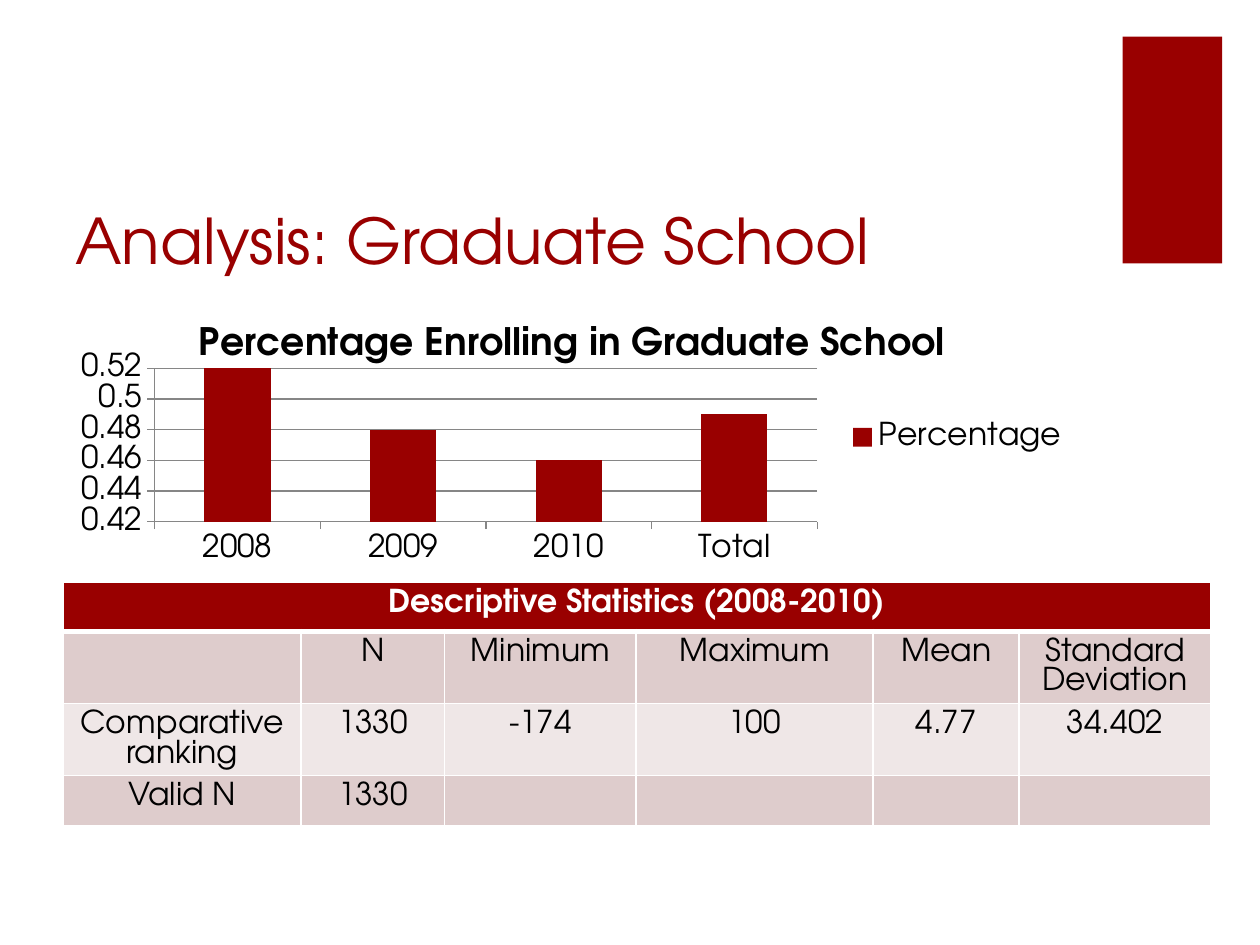
"""Build the graduate school analysis slide with a chart and a statistics table."""
from dataclasses import dataclass

from lxml import etree
from pptx import Presentation
from pptx.chart.data import CategoryChartData
from pptx.dml.color import RGBColor
from pptx.enum.chart import XL_CHART_TYPE, XL_LEGEND_POSITION, XL_TICK_MARK
from pptx.enum.shapes import MSO_SHAPE
from pptx.enum.text import MSO_ANCHOR, PP_ALIGN
from pptx.oxml import parse_xml
from pptx.oxml.ns import nsdecls, qn
from pptx.util import Inches, Pt

COLUMN = XL_CHART_TYPE.COLUMN_CLUSTERED
LEGEND_RIGHT = XL_LEGEND_POSITION.RIGHT
TICK_OUT = XL_TICK_MARK.OUTSIDE
RECTANGLE = MSO_SHAPE.RECTANGLE
BOTTOM = MSO_ANCHOR.BOTTOM
CENTER = PP_ALIGN.CENTER

HEADING = "Analysis: Graduate School"
CHART_TITLE = "Percentage Enrolling in Graduate School"
SERIES_NAME = "Percentage"
ENROLLMENT = {"2008": 0.52, "2009": 0.48, "2010": 0.46, "Total": 0.49}
STATISTICS = [
    ["Descriptive Statistics (2008-2010)", "", "", "", "", ""],
    ["", "N", "Minimum", "Maximum", "Mean", "Standard Deviation"],
    ["Comparative ranking", "1330", "-174", "100", "4.77", "34.402"],
    ["Valid N", "1330", "", "", "", ""],
]
COLUMN_WIDTHS = [1.89, 1.14, 1.52, 1.88, 1.16, 1.52]
ROW_HEIGHTS = [0.39, 0.57, 0.57, 0.4]
PLOT_AREA = {"x": 0.09, "y": 0.24, "w": 0.65, "h": 0.58}


@dataclass(frozen=True)
class Theme:
    """Colours, font and type sizes of the slide."""
    accent: str = "990000"
    ink: str = "000000"
    paper: str = "FFFFFF"
    grid: str = "868686"
    bands: tuple = ("EFE7E7", "DECCCC")
    font: str = "TeX Gyre Adventor"
    heading: float = 36
    chart_title: float = 21.6
    body: float = 18
    line_height: float = 17


THEME = Theme()


def style(font, size, color, bold=False):
    """Apply the theme font with a size, colour and weight."""
    font.name = THEME.font
    font.size = Pt(size)
    font.bold = bold
    font.color.rgb = RGBColor.from_string(color)


def paint(fill, color):
    """Fill with one solid colour."""
    fill.solid()
    fill.fore_color.rgb = RGBColor.from_string(color)


def add_heading(slide):
    """Add the corner block and the slide heading."""
    block = slide.shapes.add_shape(
        RECTANGLE, Inches(8.91), Inches(0.29), Inches(0.79), Inches(1.8))
    block.shadow.inherit = False
    paint(block.fill, THEME.accent)
    block.line.fill.background()

    heading = slide.shapes.add_textbox(
        Inches(0.5), Inches(1), Inches(8.08), Inches(1.25)).text_frame
    heading.word_wrap = True
    heading.vertical_anchor = BOTTOM
    heading.text = HEADING
    style(heading.paragraphs[0].runs[0].font, THEME.heading, THEME.accent)


def place_plot(chart):
    """Fix the inner plot area as fractions of the chart."""
    plot_area = chart.plots[0]._element.getparent()
    for old in plot_area.findall(qn("c:layout")):
        plot_area.remove(old)
    layout = parse_xml(f"<c:layout {nsdecls('c')}><c:manualLayout/></c:layout>")
    settings = {"layoutTarget": "inner", "xMode": "edge", "yMode": "edge", **PLOT_AREA}
    for tag, value in settings.items():
        etree.SubElement(layout[0], qn(f"c:{tag}")).set("val", str(value))
    plot_area.insert(0, layout)


def add_enrollment_chart(slide):
    """Add the enrollment column chart."""
    enrollment = CategoryChartData()
    enrollment.categories = list(ENROLLMENT)
    enrollment.add_series(SERIES_NAME, list(ENROLLMENT.values()))
    chart = slide.shapes.add_chart(
        COLUMN, Inches(0.5), Inches(2.42), Inches(8.09), Inches(2.1), enrollment).chart
    style(chart.font, THEME.body, THEME.ink)

    chart.has_title = True
    title = chart.chart_title.text_frame
    title.text = CHART_TITLE
    style(title.paragraphs[0].runs[0].font, THEME.chart_title, THEME.ink, True)

    chart.has_legend = True
    chart.legend.position = LEGEND_RIGHT
    chart.legend.include_in_layout = False

    columns = chart.plots[0]
    columns.gap_width = 150
    columns.vary_by_categories = False
    paint(columns.series[0].format.fill, THEME.accent)

    values = chart.value_axis
    values.minimum_scale, values.maximum_scale, values.major_unit = 0.42, 0.52, 0.02
    values.has_major_gridlines = True
    for axis in (chart.category_axis, values):
        axis.major_tick_mark = TICK_OUT
    for part in (chart.category_axis, values, values.major_gridlines):
        part.format.line.color.rgb = RGBColor.from_string(THEME.grid)
        part.format.line.width = Pt(0.75)
    place_plot(chart)


def add_borders(cell, bottom_width):
    """Give a cell paper-coloured borders."""
    properties = cell._tc.get_or_add_tcPr()
    for side, width in {"L": 1, "R": 1, "T": 1, "B": bottom_width}.items():
        properties.append(parse_xml(
            f'<a:ln{side} {nsdecls("a")} w="{Pt(width)}"><a:solidFill>'
            f'<a:srgbClr val="{THEME.paper}"/></a:solidFill></a:ln{side}>'))


def add_statistics_table(slide):
    """Add the descriptive statistics table."""
    table = slide.shapes.add_table(
        len(STATISTICS), len(COLUMN_WIDTHS), Inches(0.5), Inches(4.62),
        Inches(sum(COLUMN_WIDTHS)), Inches(sum(ROW_HEIGHTS))).table
    for column, width in zip(table.columns, COLUMN_WIDTHS):
        column.width = Inches(width)
    for row, height in zip(table.rows, ROW_HEIGHTS):
        row.height = Inches(height)

    for row_index, entries in enumerate(STATISTICS):
        header = row_index == 0
        background = THEME.accent if header else THEME.bands[row_index % 2]
        for column_index, entry in enumerate(entries):
            cell = table.cell(row_index, column_index)
            add_borders(cell, 3 if header else 1)
            paint(cell.fill, background)
            paragraph = cell.text_frame.paragraphs[0]
            paragraph.alignment = CENTER
            paragraph.line_spacing = Pt(THEME.line_height)
            if entry:
                paragraph.text = entry
                style(paragraph.runs[0].font, THEME.body,
                      THEME.paper if header else THEME.ink, header)
    table.cell(0, 0).merge(table.cell(0, len(COLUMN_WIDTHS) - 1))


def main():
    """Build and save the slide."""
    deck = Presentation()
    deck.slide_width, deck.slide_height = Inches(10), Inches(7.5)
    slide = deck.slides.add_slide(deck.slide_layouts[6])
    add_heading(slide)
    add_enrollment_chart(slide)
    add_statistics_table(slide)
    deck.save("out.pptx")


if __name__ == "__main__":
    main()
